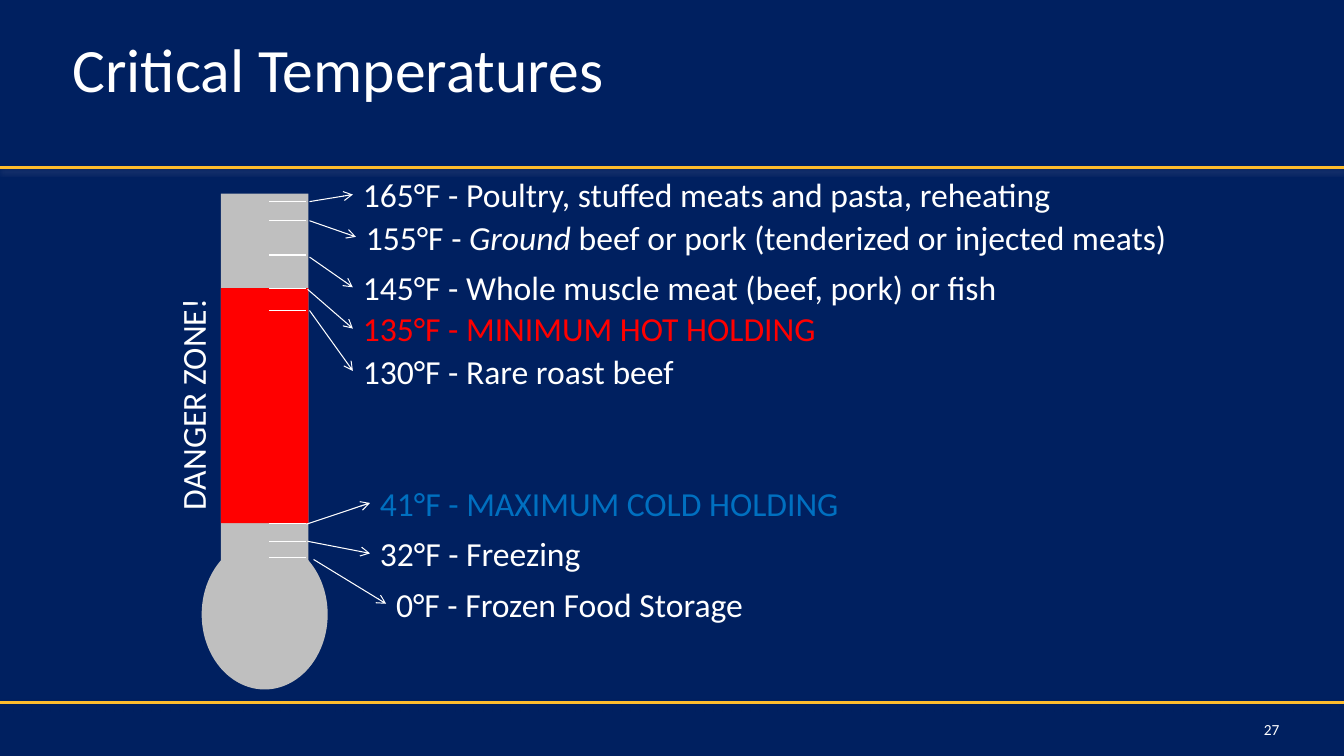
from dataclasses import dataclass

from lxml.etree import SubElement
from pptx import Presentation
from pptx.dml.color import RGBColor
from pptx.enum.shapes import MSO_CONNECTOR as Connector, MSO_SHAPE as Shape
from pptx.enum.text import MSO_ANCHOR as Anchor, MSO_AUTO_SIZE as AutoSize, PP_ALIGN as Align
from pptx.oxml.ns import qn
from pptx.util import Inches, Pt


@dataclass(frozen=True)
class Theme:
    font: str = "Calibri"
    title_size: int = 44
    label_size: int = 24
    number_size: int = 11
    navy: str = "002060"
    gold: str = "FEBC2C"
    glow: str = "405080"
    white: str = "FFFFFF"
    glass: str = "BFBFBF"
    hot: str = "FF0000"
    cold: str = "0070C0"


@dataclass(frozen=True)
class Reading:
    """A label, its tick on the scale and the start of the arrow between them."""
    label: str
    left: float
    top: float
    width: float
    tick: float
    arrow_x: float
    arrow_y: float
    color: str = Theme.white
    emphasis: str = ""


THEME = Theme()
SLIDE_WIDTH, SLIDE_HEIGHT = 13.33, 7.5
LABEL_HEIGHT = 0.5
TICK_LEFT, TICK_RIGHT = 2.67, 3.04

READINGS = [
    Reading("165°F - Poultry, stuffed meats and pasta, reheating",
            3.5, 1.68, 7.09, 2.0, 3.07, 2.0),
    Reading("155°F - Ground beef or pork (tenderized or injected meats)",
            3.53, 2.1, 8.22, 2.19, 3.07, 2.19, emphasis="Ground"),
    Reading("145°F - Whole muscle meat (beef, pork) or fish",
            3.5, 2.6, 6.55, 2.53, 3.07, 2.55),
    Reading("135°F - MINIMUM HOT HOLDING", 3.5, 3.01, 4.73, 2.86, 3.05, 2.87, THEME.hot),
    Reading("130°F - Rare roast beef", 3.5, 3.43, 3.31, 3.08, 3.07, 3.08),
    Reading("41°F - MAXIMUM COLD HOLDING", 3.67, 4.74, 4.81, 5.19, 3.04, 5.2, THEME.cold),
    Reading("32°F - Freezing", 3.67, 5.24, 2.5, 5.37, 3.05, 5.37),
    Reading("0°F - Frozen Food Storage", 3.83, 5.74, 3.69, 5.53, 3.11, 5.55),
]


def style_font(font, size: int, color: str) -> None:
    font.name = THEME.font
    font.size = Pt(size)
    font.color.rgb = RGBColor.from_string(color)


def add_line(slide, start: tuple, end: tuple, color: str = THEME.white, width: float = 0.75):
    line = slide.shapes.add_connector(Connector.STRAIGHT, *map(Inches, start + end))
    line.line.color.rgb = RGBColor.from_string(color)
    line.line.width = Pt(width)
    SubElement(line._element.spPr, qn("a:effectLst"))
    return line


def add_rule(slide, y: float, shadow_color: str) -> None:
    """Draw a gold line across the slide with a soft shadow below it."""
    rule = add_line(slide, (0, y), (SLIDE_WIDTH, y), THEME.gold, 2.5)
    effects = rule._element.spPr.find(qn("a:effectLst"))
    shadow = SubElement(effects, qn("a:outerShdw"), blurRad=str(Pt(3.1)), dist=str(Pt(2)),
                        dir="5400000", rotWithShape="0")
    color = SubElement(shadow, qn("a:srgbClr"), val=shadow_color)
    SubElement(color, qn("a:alpha"), val="83000")


def add_part(shapes, kind: Shape, box: tuple, color: str) -> None:
    part = shapes.add_shape(kind, *map(Inches, box))
    part.shadow.inherit = False
    part.fill.solid()
    part.fill.fore_color.rgb = RGBColor.from_string(color)
    part.line.fill.background()


def add_label(slide, text: str, box: tuple, color: str = THEME.white, emphasis: str = ""):
    label = slide.shapes.add_textbox(*map(Inches, box))
    label.text_frame.word_wrap = False
    paragraph = label.text_frame.paragraphs[0]
    before, found, after = text.partition(emphasis) if emphasis else (text, "", "")
    for piece in filter(None, (before, found, after)):
        run = paragraph.add_run()
        run.text = piece
        style_font(run.font, THEME.label_size, color)
        if piece == emphasis:
            run.font.italic = True
    return label


def add_title(slide, text: str) -> None:
    title = slide.shapes.title
    title.left, title.top, title.width, title.height = map(Inches, (0.67, 0.35, 10.56, 0.65))
    frame = title.text_frame
    frame.text = text
    frame.auto_size = AutoSize.NONE
    frame.vertical_anchor = Anchor.MIDDLE
    frame.margin_left = frame.margin_right = Inches(0.05)
    frame.margin_top = frame.margin_bottom = 0
    frame.paragraphs[0].alignment = Align.LEFT
    style_font(frame.paragraphs[0].runs[0].font, THEME.title_size, THEME.white)


def add_slide_number(slide, number: str) -> None:
    frame = slide.shapes.add_textbox(*map(Inches, (11.83, 7.08, 0.86, 0.25))).text_frame
    frame.text = number
    frame.word_wrap = True
    frame.vertical_anchor = Anchor.BOTTOM
    frame.margin_left = frame.margin_right = frame.margin_top = frame.margin_bottom = 0
    frame.paragraphs[0].alignment = Align.RIGHT
    style_font(frame.paragraphs[0].runs[0].font, THEME.number_size, THEME.white)


def add_thermometer(slide) -> None:
    glass = slide.shapes.add_group_shape()
    add_part(glass.shapes, Shape.OVAL, (2, 5.35, 1.25, 1.49), THEME.glass)
    add_part(glass.shapes, Shape.RECTANGLE, (2.19, 1.92, 0.87, 3.66), THEME.glass)
    add_part(slide.shapes, Shape.RECTANGLE, (2.19, 2.86, 0.87, 2.33), THEME.hot)
    danger_zone = add_label(slide, "DANGER ZONE!", (0.75, 3.75, 2.32, LABEL_HEIGHT))
    danger_zone.rotation = 270


def add_reading(slide, reading: Reading) -> None:
    add_line(slide, (TICK_LEFT, reading.tick), (TICK_RIGHT, reading.tick))
    box = (reading.left, reading.top, reading.width, LABEL_HEIGHT)
    label = add_label(slide, reading.label, box, reading.color, reading.emphasis)
    arrow = add_line(slide, (reading.arrow_x, reading.arrow_y),
                     (reading.left, reading.top + LABEL_HEIGHT / 2))
    arrow.end_connect(label, 1)
    SubElement(arrow.line._get_or_add_ln(), qn("a:tailEnd"), type="arrow")


def main() -> None:
    deck = Presentation()
    deck.slide_width, deck.slide_height = Inches(SLIDE_WIDTH), Inches(SLIDE_HEIGHT)
    slide = deck.slides.add_slide(deck.slide_layouts[5])
    slide.background.fill.solid()
    slide.background.fill.fore_color.rgb = RGBColor.from_string(THEME.navy)

    add_rule(slide, 1.66, THEME.glow)
    add_rule(slide, 6.97, THEME.navy)
    add_title(slide, "Critical Temperatures")
    add_thermometer(slide)
    for reading in READINGS:
        add_reading(slide, reading)
    add_slide_number(slide, "27")
    deck.save("out.pptx")


if __name__ == "__main__":
    main()
